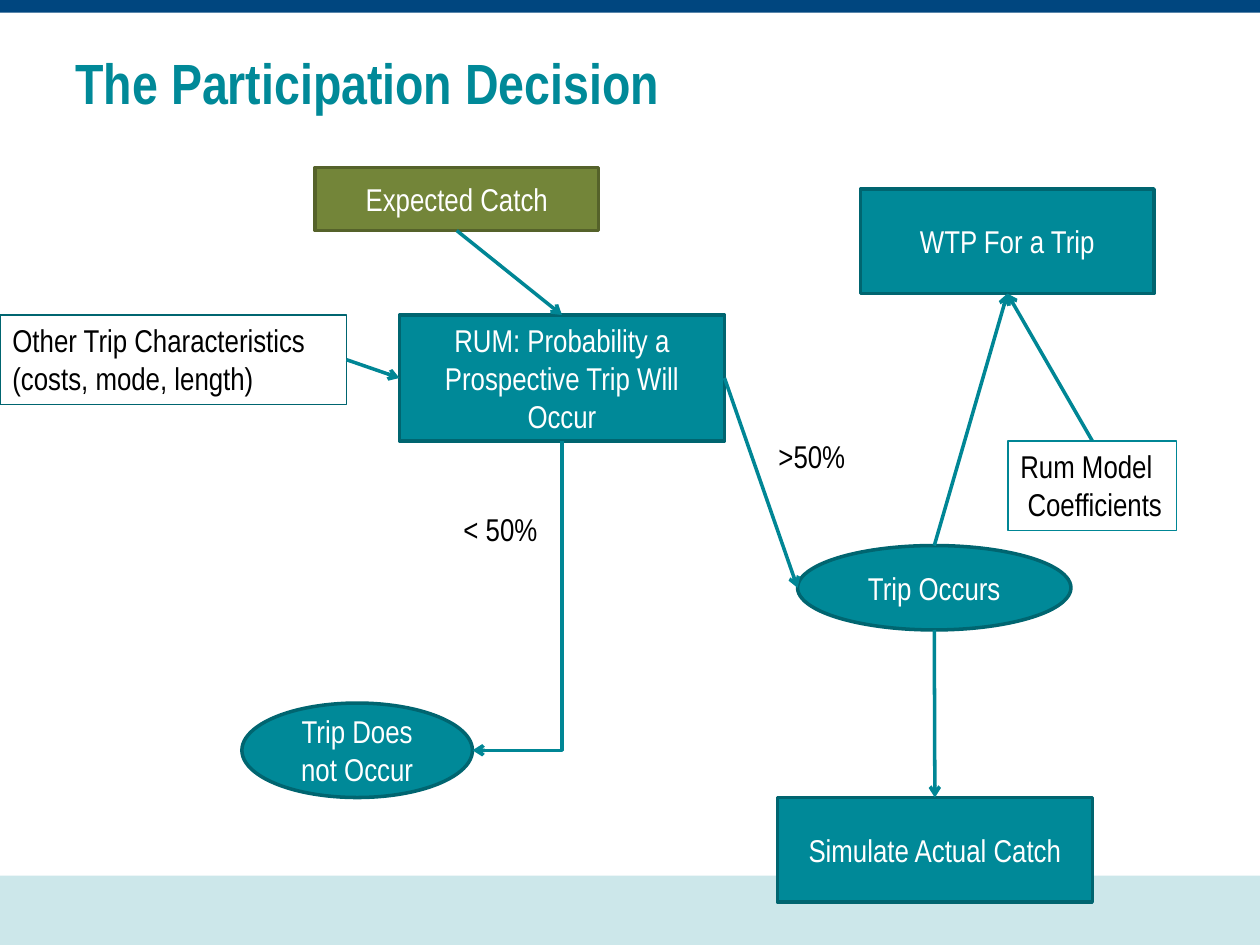
from pptx import Presentation
from pptx.dml.color import RGBColor
from pptx.enum.shapes import MSO_CONNECTOR as Connector, MSO_SHAPE as Shape
from pptx.enum.text import MSO_ANCHOR as Anchor, MSO_AUTO_SIZE as AutoSize, PP_ALIGN as Align
from pptx.oxml.ns import qn
from pptx.util import Inches, Pt
from lxml.etree import SubElement

FONT = "Arial Narrow"
TEAL, TEAL_EDGE, ARROW = "008998", "006570", "008695"
OLIVE, OLIVE_EDGE = "738539", "55622A"
TITLE = "The Participation Decision"
BANDS = [((0, 6.95, 10, 0.55), "CCE7EA"), ((0, 0, 10, 0.1), "00467F")]

STEPS = {
    "expected": ("Expected Catch", Shape.RECTANGLE, (2.5, 1.33, 2.25, 0.5), OLIVE, OLIVE_EDGE),
    "rum": ("RUM: Probability a Prospective Trip Will Occur", Shape.RECTANGLE,
            (3.17, 2.5, 2.58, 1), TEAL, TEAL_EDGE),
    "no trip": ("Trip Does not Occur", Shape.OVAL, (1.92, 5.58, 1.83, 0.75), TEAL, TEAL_EDGE),
    "trip": ("Trip Occurs", Shape.OVAL, (6.33, 4.33, 2.17, 0.67), TEAL, TEAL_EDGE),
    "wtp": ("WTP For a Trip", Shape.RECTANGLE, (6.83, 1.5, 2.33, 0.83), TEAL, TEAL_EDGE),
    "simulate": ("Simulate Actual Catch", Shape.RECTANGLE, (6.17, 6.33, 2.5, 0.83), TEAL, TEAL_EDGE),
}
INPUTS = {
    "coefficients": ("Rum Model\n Coefficients", (8, 3.5, 1.34, 0.71), ARROW, False),
    "characteristics": ("Other Trip Characteristics\n(costs, mode, length)",
                        (0, 2.5, 2.75, 0.71), TEAL_EDGE, True),
}
LABELS = [("< 50%", (3.58, 4, 0.82, 0.4)), (">50%", (6.08, 3.42, 0.76, 0.4))]
ARROWS = [
    ("expected", "bottom", "rum", "top"),
    ("rum", "right", "trip", "left"),
    ("trip", "top", "wtp", "bottom"),
    ("coefficients", "top", "wtp", "bottom"),
    ("characteristics", "right", "rum", "left"),
    ("trip", "bottom", "simulate", "top"),
]
SIDES = {"top": (0.5, 0), "bottom": (0.5, 1), "left": (0, 0.5), "right": (1, 0.5)}


def color(value):
    return RGBColor.from_string(value)


def write(shape, text, text_color, align=Align.LEFT, size=18, bold=False):
    shape.text_frame.text = text
    for paragraph in shape.text_frame.paragraphs:
        paragraph.alignment = align
        font = paragraph.runs[0].font
        font.name, font.size, font.bold = FONT, Pt(size), bold
        font.color.rgb = color(text_color)


def add_block(slide, kind, box, fill=None, line=None, width=2):
    shape = slide.shapes.add_shape(kind, *map(Inches, box))
    shape.shadow.inherit = False
    if fill:
        shape.fill.solid()
        shape.fill.fore_color.rgb = color(fill)
    else:
        shape.fill.background()
    if line:
        shape.line.color.rgb = color(line)
        shape.line.width = Pt(width)
    else:
        shape.line.fill.background()
    return shape


def fit_text(shape, wrap):
    shape.text_frame.word_wrap = wrap
    shape.text_frame.auto_size = AutoSize.SHAPE_TO_FIT_TEXT
    shape.text_frame.vertical_anchor = Anchor.TOP


def side_point(shape, side):
    across, down = SIDES[side]
    return int(shape.left + across * shape.width), int(shape.top + down * shape.height)


def add_arrow(slide, kind, start, end):
    connector = slide.shapes.add_connector(kind, *start, *end)
    connector.line.color.rgb = color(ARROW)
    connector.line.width = Pt(2)
    SubElement(connector.line._get_or_add_ln(), qn("a:tailEnd"), type="arrow")
    SubElement(connector._element.spPr, qn("a:effectLst"))
    return connector


def add_down_left_arrow(slide, start, end):
    """Draw a one-bend arrow as a right-then-down elbow turned a quarter clockwise."""
    middle_x, middle_y = (start[0] + end[0]) // 2, (start[1] + end[1]) // 2
    half_run, half_drop = (end[1] - start[1]) // 2, (start[0] - end[0]) // 2
    connector = add_arrow(slide, Connector.ELBOW,
                          (middle_x - half_run, middle_y - half_drop),
                          (middle_x + half_run, middle_y + half_drop))
    properties = connector._element.spPr
    properties.find(qn("a:xfrm")).set("rot", str(90 * 60000))
    properties.find(qn("a:prstGeom")).set("prst", "bentConnector2")


def main():
    presentation = Presentation()
    presentation.slide_width, presentation.slide_height = Inches(10), Inches(7.5)
    slide = presentation.slides.add_slide(presentation.slide_layouts[5])

    for box, fill in BANDS:
        add_block(slide, Shape.RECTANGLE, box, fill)

    title = slide.shapes.title
    title.left, title.top, title.width, title.height = map(Inches, (0.5, 0.3, 9, 0.7))
    write(title, TITLE, TEAL, size=32.4, bold=True)
    title.text_frame.vertical_anchor = Anchor.MIDDLE
    title.text_frame.auto_size = AutoSize.NONE

    nodes = {}
    for name, (text, kind, box, fill, line) in STEPS.items():
        nodes[name] = add_block(slide, kind, box, fill, line)
        write(nodes[name], text, "FFFFFF", Align.CENTER)
        nodes[name].text_frame.word_wrap = True
        nodes[name].text_frame.vertical_anchor = Anchor.MIDDLE
    for name, (text, box, line, wrap) in INPUTS.items():
        nodes[name] = add_block(slide, Shape.RECTANGLE, box, line=line, width=0.75)
        write(nodes[name], text, "000000")
        fit_text(nodes[name], wrap)
    for text, box in LABELS:
        label = slide.shapes.add_textbox(*map(Inches, box))
        write(label, text, "000000")
        fit_text(label, False)

    for source, source_side, target, target_side in ARROWS:
        add_arrow(slide, Connector.STRAIGHT, side_point(nodes[source], source_side),
                  side_point(nodes[target], target_side))
    add_down_left_arrow(slide, side_point(nodes["rum"], "bottom"),
                        side_point(nodes["no trip"], "right"))

    presentation.save("out.pptx")


if __name__ == "__main__":
    main()
